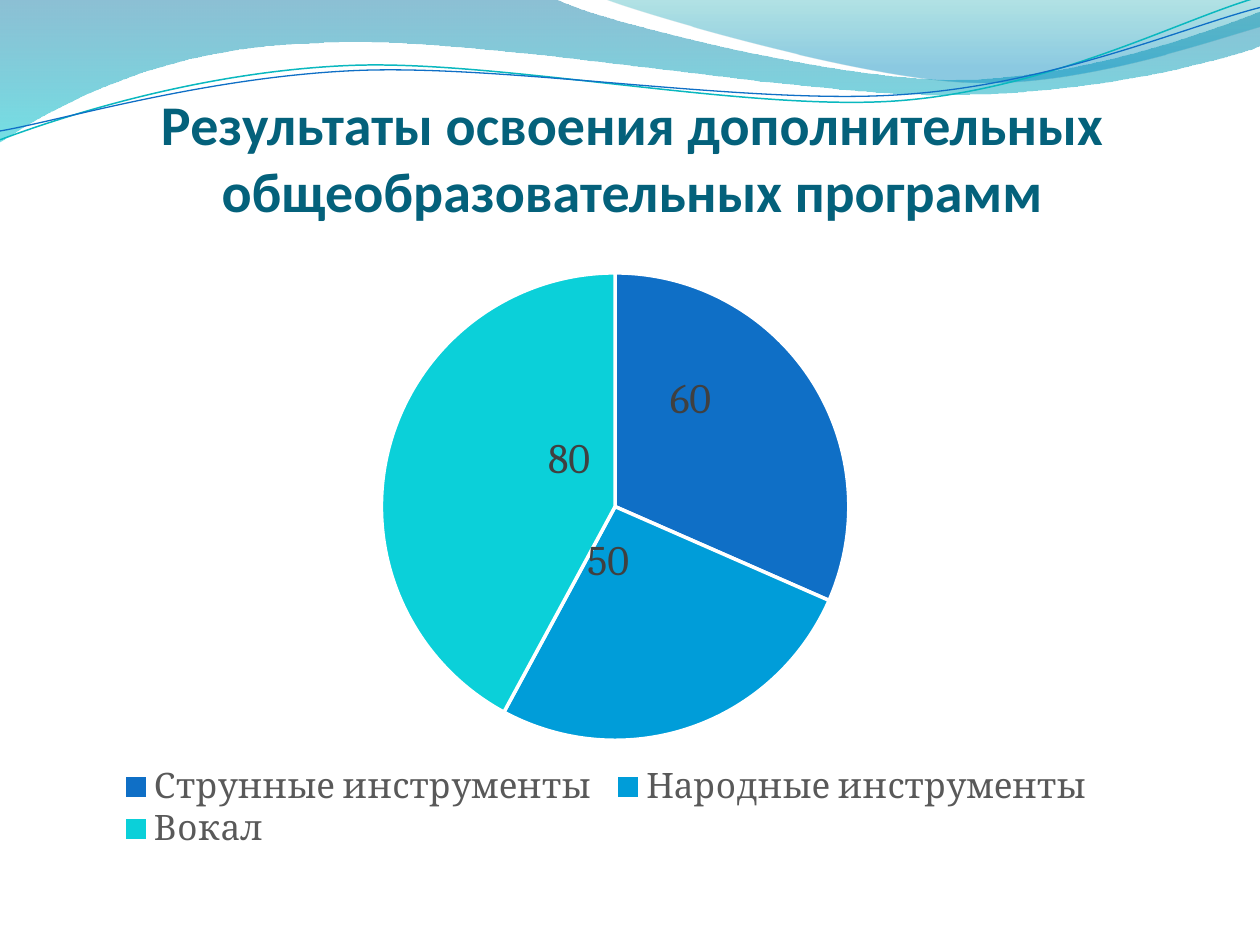
import math

from lxml import etree
from pptx import Presentation, util as u
from pptx.chart.data import CategoryChartData
from pptx.dml.color import RGBColor
from pptx.enum import chart as ch, text
from pptx.oxml import parse_xml
from pptx.oxml.ns import nsdecls, qn

INCH = 2.54  # centimetres


def color(hex_string):
    return RGBColor.from_string(hex_string)


def layout_xml(**values):
    parts = "".join(f'<c:{name} val="{value}"/>' for name, value in values.items())
    return parse_xml(f"<c:layout {nsdecls('c')}><c:manualLayout>{parts}</c:manualLayout></c:layout>")


deck = Presentation()
deck.slide_width, deck.slide_height = u.Cm(10 * INCH), u.Cm(7.5 * INCH)
page = deck.slides.add_slide(deck.slide_layouts[6])

# Waves along the top: each piece is a line end (2 numbers) or a cubic curve (6 numbers), in inches
band = [(0, 0), (4.4, -0.01), (4.76, 0.17, 6.64, 0.63, 7.58, 0.63),
        (8.53, 0.63, 9.58, 0.26, 10, 0.09), (10.01, 0.36),
        (9.83, 0.44, 8.7, 0.76, 7.46, 0.75), (6.22, 0.75, 3.82, 0.28, 2.57, 0.34),
        (1.29, 0.36, 0.46, 0.83, -0.01, 1.13)]
crest = [(4.79, -0.01), (5.09, 0.11, 6.82, 0.62, 7.69, 0.65),
         (8.56, 0.69, 9.61, 0.32, 10, 0.21), (10, 0)]
teal_line = [(0, 1.11), (0.48, 0.93, 1.58, 0.57, 2.77, 0.52),
             (3.95, 0.47, 5.93, 0.89, 7.13, 0.8), (8.33, 0.71, 9.38, 0.15, 9.98, -0.02)]
blue_line = [(0, 1.04), (0.47, 0.96, 1.64, 0.61, 2.83, 0.56),
             (4.03, 0.51, 5.97, 0.84, 7.17, 0.75), (8.36, 0.67, 9.41, 0.21, 10, 0.06)]
waves = [  # outline, gradient stops (position, colour, opacity %), line (colour, width), tilt, pivot
    (band, [(0, "0074A1", 45), (1, "00C6CF", 55)], None, 0, (0, 0)),
    (crest, [(0, "00A1A9", 30), (0.8, "008BBF", 45)], None, 0, (0, 0)),
    (teal_line, None, ("0AB8BF", 0.85), -2.7, (4.99, 0.57)),
    (blue_line, None, ("0F6FC6", 0.75), -2.7, (5, 0.59)),
]
for outline, stops, stroke, tilt, (pivot_x, pivot_y) in waves:
    # Untilt the points, since the shape itself is rotated
    cos, sin = math.cos(math.radians(-tilt)), math.sin(math.radians(-tilt))
    pieces = []
    for piece in outline:
        pairs = [(x - pivot_x, y - pivot_y) for x, y in zip(piece[::2], piece[1::2])]
        pieces.append([(u.Cm((pivot_x + x * cos - y * sin) * INCH),
                        u.Cm((pivot_y + x * sin + y * cos) * INCH)) for x, y in pairs])
    ends = [piece[-1] for piece in pieces]
    builder = page.shapes.build_freeform(*ends[0])
    builder.add_line_segments(ends[1:], close=stops is not None)
    wave = builder.convert_to_shape()
    left, top = wave.left, wave.top

    # Turn the straight pieces into curves
    segments = list(wave._element.spPr.iter(qn("a:lnTo")))
    for segment, piece in zip(segments, pieces[1:]):
        if len(piece) == 3:
            curve = etree.Element(qn("a:cubicBezTo"))
            for x, y in piece:
                etree.SubElement(curve, qn("a:pt"), x=str(x - left), y=str(y - top))
            segment.getparent().replace(segment, curve)

    wave.rotation = tilt
    wave.shadow.inherit = False
    if stops:
        wave.line.fill.background()
        wave.fill.gradient()
        wave.fill.gradient_angle = 270
        for stop, (position, shade, _) in zip(wave.fill.gradient_stops, stops):
            stop.position = position
            stop.color.rgb = color(shade)
        for tone, (_, _, opacity) in zip(wave._element.spPr.iter(qn("a:srgbClr")), stops):
            etree.SubElement(tone, qn("a:alpha")).set("val", str(opacity * 1000))
    else:
        wave.fill.background()
        wave.line.color.rgb = color(stroke[0])
        wave.line.width = u.Pt(stroke[1])

# Title
box = page.shapes.add_textbox(u.Cm(1.32), u.Cm(1.93), u.Cm(22.86), u.Cm(2.59))
frame = box.text_frame
frame.word_wrap = True
frame.vertical_anchor = text.MSO_ANCHOR.BOTTOM
frame.margin_left = frame.margin_right = frame.margin_bottom = 0
frame.margin_top = u.Cm(0.13)
frame.text = "Результаты освоения дополнительных общеобразовательных программ"
para = frame.paragraphs[0]
para.alignment = text.PP_ALIGN.CENTER
span = para.runs[0]
span.font.name, span.font.size, span.font.bold = "Calibri", u.Pt(32), True
span.font.color.rgb = color("04617B")

# Pie chart
data = CategoryChartData()
data.categories = ["Струнные инструменты", "Народные инструменты ", "Вокал"]
data.add_series("Series 1", (60, 50, 80))
chart = page.shapes.add_chart(ch.XL_CHART_TYPE.PIE, u.Cm(0.86), u.Cm(5.13),
                              u.Cm(22.63), u.Cm(12.4), data).chart
chart.has_title = False
chart.font.name, chart.font.size = "Cambria", u.Pt(10)
chart.font.color.rgb = color("000000")
plot = chart.plots[0]
plot.vary_by_categories = True
area = chart._chartSpace.chart.plotArea
for old in area.findall(qn("c:layout")):
    area.remove(old)
area.insert(0, layout_xml(layoutTarget="inner", xMode="edge", yMode="edge",
                          x=0.3, y=0.03, w=0.42, h=0.76))

# Legend
chart.has_legend = True
legend = chart.legend
legend.position = ch.XL_LEGEND_POSITION.BOTTOM
legend.include_in_layout = False
legend.font.name, legend.font.size = "Cambria", u.Pt(20)
legend.font.color.rgb = color("595959")
for old in legend._element.findall(qn("c:layout")):
    legend._element.remove(old)
legend._element.insert(1, layout_xml(xMode="edge", yMode="edge", x=0.06, y=0.83, w=0.89, h=0.14))

# Slices, with labels shifted from the slice centres
labels = plot.series[0].data_labels
labels.show_value = True
labels.font.name, labels.font.size = "Cambria", u.Pt(20)
labels.font.color.rgb = color("404040")
slices = [("0F6FC6", -0.02, -0.07), ("009DD9", -0.04, -0.09), ("0BD0D9", 0.06, -0.03)]
for index, (shade, _, _) in enumerate(slices):
    point = plot.series[0].points[index]
    point.format.fill.solid()
    point.format.fill.fore_color.rgb = color(shade)
    point.format.line.color.rgb = color("FFFFFF")
    point.format.line.width = u.Pt(2)
    label = point.data_label
    label.font.name, label.font.size = "Cambria", u.Pt(24)
    label.font.color.rgb = color("404040")
    label.position = ch.XL_LABEL_POSITION.CENTER
for mark, (_, shift_x, shift_y) in zip(area.iter(qn("c:dLbl")), slices):
    mark.insert(1, layout_xml(x=shift_x, y=shift_y))

deck.save("out.pptx")
